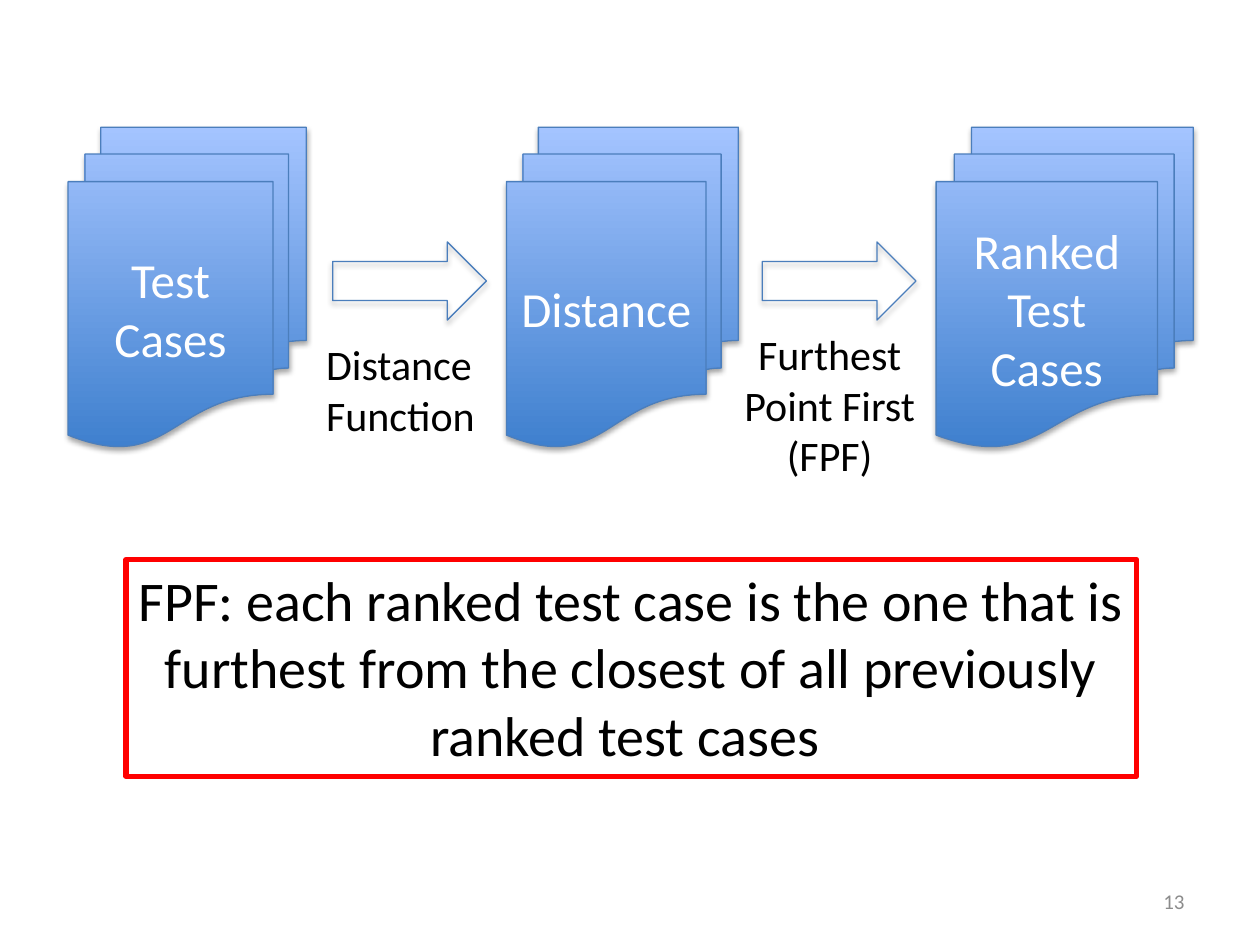
from dataclasses import dataclass

from lxml import etree
from pptx import Presentation
from pptx.dml.color import RGBColor
from pptx.enum.shapes import MSO_SHAPE
from pptx.enum.text import MSO_ANCHOR, PP_ALIGN
from pptx.oxml.ns import qn
from pptx.util import Inches, Pt

DOCUMENTS = MSO_SHAPE.FLOWCHART_MULTIDOCUMENT
ARROW = MSO_SHAPE.RIGHT_ARROW
RECTANGLE = MSO_SHAPE.RECTANGLE
LEFT, CENTER, RIGHT = PP_ALIGN.LEFT, PP_ALIGN.CENTER, PP_ALIGN.RIGHT
TOP, MIDDLE = MSO_ANCHOR.TOP, MSO_ANCHOR.MIDDLE


@dataclass(frozen=True)
class Theme:
    """Colours, font and type sizes of the slide."""
    font: str = "Calibri"
    white: RGBColor = RGBColor.from_string("FFFFFF")
    black: RGBColor = RGBColor.from_string("000000")
    grey: RGBColor = RGBColor.from_string("8C8C8C")
    red: RGBColor = RGBColor.from_string("FF0000")
    outline: RGBColor = RGBColor.from_string("4B7EBC")
    gradient: tuple = (RGBColor.from_string("3F80CE"), RGBColor.from_string("A4C4FF"))
    number_size: Pt = Pt(12)
    label_size: Pt = Pt(24)
    stage_size: Pt = Pt(28)
    note_size: Pt = Pt(32)


THEME = Theme()


def write_text(shape, lines, size, color, align=CENTER, anchor=MIDDLE):
    """Fill a shape with one paragraph for each line."""
    frame = shape.text_frame
    frame.word_wrap = True
    frame.vertical_anchor = anchor
    frame.text = "\n".join(lines)
    for paragraph in frame.paragraphs:
        paragraph.alignment = align
        paragraph.font.name = THEME.font
        paragraph.font.size = size
        paragraph.font.color.rgb = color


def add_text(slide, box, text, size, color, align, anchor=TOP):
    """Add a text box at the given box."""
    shape = slide.shapes.add_textbox(*map(Inches, box))
    write_text(shape, [text], size, color, align, anchor)


def add_outlined(slide, kind, box, color, width):
    """Add an unfilled preset shape with an outline and no shadow."""
    shape = slide.shapes.add_shape(kind, *map(Inches, box))
    shape.shadow.inherit = False
    shape.fill.background()
    shape.line.color.rgb = color
    shape.line.width = Pt(width)
    return shape


def add_soft_shadow(shape):
    """Give a shape a soft shadow that falls straight down."""
    effects = shape._element.spPr.find(qn("a:effectLst"))
    shadow = etree.SubElement(effects, qn("a:outerShdw"), blurRad=str(Pt(3.1)),
                              dist=str(Pt(1.8)), dir="5400000", rotWithShape="0")
    color = etree.SubElement(shadow, qn("a:srgbClr"), val=str(THEME.black))
    etree.SubElement(color, qn("a:alpha"), val="35000")


def add_stage(slide, box, lines):
    """Add a stack of documents that names one stage."""
    shape = add_outlined(slide, DOCUMENTS, box, THEME.outline, 0.75)
    shape.fill.gradient()
    shape.fill.gradient_angle = 90
    for stop, color in zip(shape.fill.gradient_stops, THEME.gradient):
        stop.color.rgb = color
    add_soft_shadow(shape)
    write_text(shape, lines, THEME.stage_size, THEME.white)


def add_step(slide, arrow_box, label_box, label, align):
    """Add an arrow between two stages and its label."""
    add_soft_shadow(add_outlined(slide, ARROW, arrow_box, THEME.outline, 0.75))
    add_text(slide, label_box, label, THEME.label_size, THEME.black, align)


def add_pipeline(slide, box):
    """Add the row of stages and the steps that join them."""
    left, top, _, height = box
    stages = [(0, 1.89, ["Test Cases"]), (3.48, 1.84, ["Distance"]),
              (6.89, 2.04, ["Ranked", "Test Cases"])]
    for offset, width, lines in stages:
        add_stage(slide, (left + offset, top, width, height), lines)
    steps = [(2.1, (1.95, 1.63, 2.04, 0.91), "Distance Function", LEFT),
             (5.51, (5.26, 1.55, 1.57, 1.31), "Furthest Point First (FPF)", CENTER)]
    for offset, (x, y, width, label_height), label, align in steps:
        add_step(slide, (left + offset, top + 0.91, 1.22, 0.62),
                 (left + x, top + y, width, label_height), label, align)


def add_definition(slide, box):
    """Add the framed definition of FPF."""
    shape = add_outlined(slide, RECTANGLE, box, THEME.red, 3)
    write_text(shape, ["FPF: each ranked test case is the one that is furthest from "
                       "the closest of all previously ranked test cases "],
               THEME.note_size, THEME.black, anchor=TOP)


def main():
    """Build the slide and save it."""
    presentation = Presentation()
    presentation.slide_width = Inches(10)
    presentation.slide_height = Inches(7.5)
    slide = presentation.slides.add_slide(presentation.slide_layouts[6])
    add_pipeline(slide, (0.54, 1.01, 8.93, 2.54))
    add_definition(slide, (1, 4.44, 8.02, 1.72))
    add_text(slide, (7.17, 6.95, 2.33, 0.4), "13", THEME.number_size, THEME.grey,
             RIGHT, MIDDLE)
    presentation.save("out.pptx")


if __name__ == "__main__":
    main()
